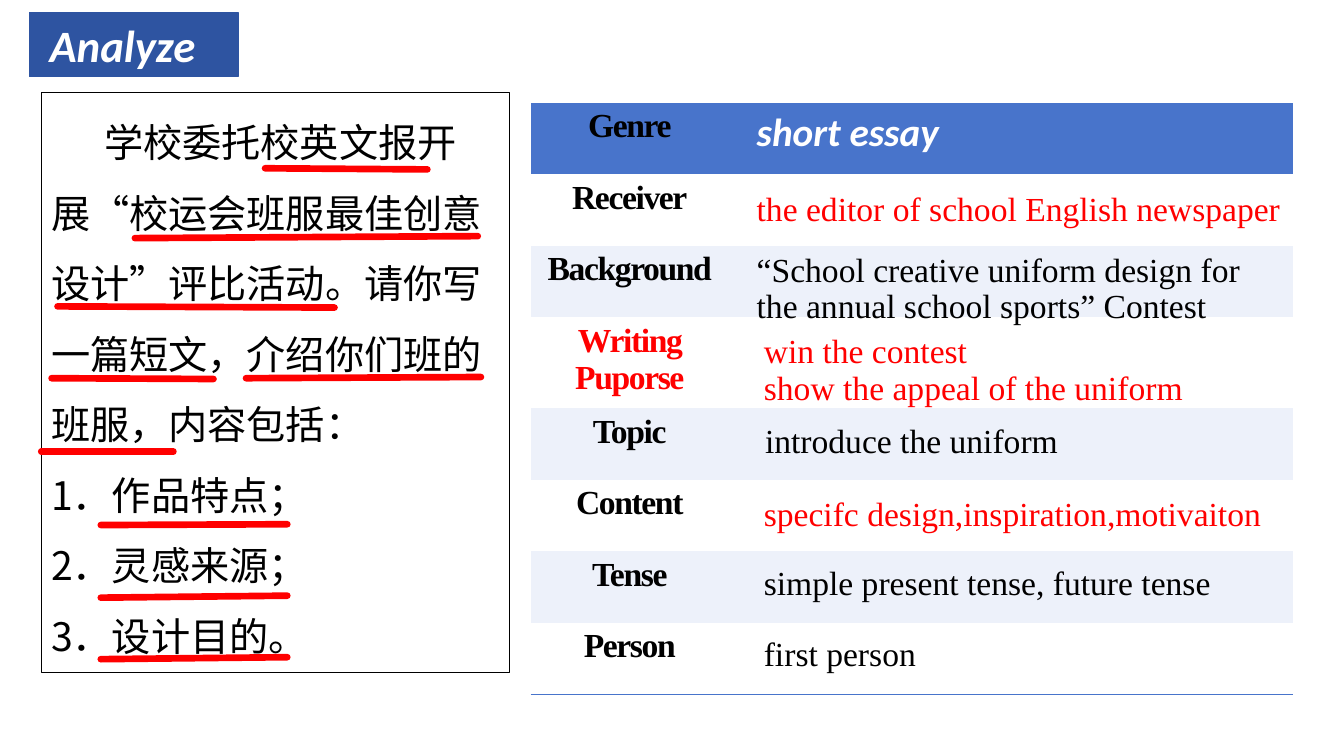
from dataclasses import dataclass
from typing import Any

from lxml import etree
from pptx import Presentation
from pptx import util as u
from pptx.dml.color import RGBColor
from pptx.enum import lang, shapes, text
from pptx.oxml import ns

COLORS = {
    "black": "000000",
    "white": "FFFFFF",
    "red": "FF0000",
    "title": "2E54A1",
    "header": "4874CB",
    "band": "EDF1FA",
}
SERIF, SANS, CHINESE = "Times New Roman", "Calibri", "Noto Sans CJK SC"
TITLE_FORMAT = {"name": SANS, "size": u.Pt(32), "bold": True, "italic": True}
GENRE_FORMAT = {**TITLE_FORMAT, "size": u.Pt(28)}
ANSWER_FORMAT = {"name": SERIF, "size": u.Pt(24)}
LABEL_FORMAT = {**ANSWER_FORMAT, "bold": True}
PROMPT_FORMAT = {
    "name": CHINESE,
    "size": u.Pt(28),
    "language_id": lang.MSO_LANGUAGE_ID.SIMPLIFIED_CHINESE,
}
NO_STYLE_TABLE = "{2D5ABB26-0587-4C30-8999-92F81FD0307C}"


@dataclass
class Answer:
    lines: list[str]
    left: float
    top: float
    width: float
    height: float
    color: str = "black"
    spacing: float = 0.9


@dataclass
class Underline:
    x1: float
    y1: float
    x2: float
    y2: float


PROMPT = [
    "学校委托校英文报开展“校运会班服最佳创意设计”评比活动。请你写一篇短文，介绍你们班的班服，内容包括：",
    "1．作品特点；",
    "2．灵感来源；",
    "3．设计目的。",
]
LABELS = ["Genre", "Receiver", "Background", "Writing Puporse",
          "Topic", "Content", "Tense", "Person"]
GENRE = Answer(["short essay"], 18.82, 2.59, 7.75, 1.45, "white", 1.0)
ANSWERS = [
    Answer(["the editor of school English newspaper"], 18.82, 4.62, 14.8, 1.27, "red", 1.0),
    Answer(["“School creative uniform design for the annual school sports” Contest"],
           18.82, 6.25, 13.41, 2.11),
    Answer(["win the contest", "show the appeal of the uniform"],
           19, 8.31, 14.43, 2.11, "red"),
    Answer(["introduce the uniform"], 19.03, 10.57, 14.43, 1.12),
    Answer(["specifc design,inspiration,motivaiton"], 19, 12.4, 14.43, 1.12, "red"),
    Answer(["simple present tense, future tense"], 19, 14.15, 14.43, 1.12),
    Answer(["first person"], 19, 15.95, 14.43, 1.12),
]
UNDERLINES = [
    Underline(1.45, 7.72, 8.43, 7.75),
    Underline(1.3, 9.53, 5.38, 9.55),
    Underline(6.2, 9.53, 12.12, 9.5),
    Underline(1.04, 11.38, 4.37, 11.38),
    Underline(2.54, 13.23, 7.24, 13.21),
    Underline(2.54, 15.06, 7.24, 15.01),
    Underline(2.54, 16.61, 7.24, 16.56),
    Underline(6.68, 4.24, 10.77, 4.27),
    Underline(3.4, 6, 12.04, 5.95),
]


def rgb(color: str) -> RGBColor:
    return RGBColor.from_string(COLORS[color])


def set_all(target: Any, values: dict[str, Any]) -> None:
    for name, value in values.items():
        setattr(target, name, value)


def write_lines(frame: Any, lines: list[str], font: dict[str, Any], color: str,
                **paragraph_format: Any) -> None:
    """Fill a text frame with one formatted run per paragraph."""
    frame.word_wrap = True
    for index, line in enumerate(lines):
        paragraph = frame.add_paragraph() if index else frame.paragraphs[0]
        set_all(paragraph, paragraph_format)
        run = paragraph.add_run()
        run.text = line
        set_all(run.font, font)
        run.font.color.rgb = rgb(color)


def add_box(slide: Any, left: float, top: float, width: float, height: float,
            line: str) -> Any:
    shape = slide.shapes.add_shape(
        shapes.MSO_SHAPE.RECTANGLE, u.Cm(left), u.Cm(top), u.Cm(width), u.Cm(height))
    shape.shadow.inherit = False
    shape.fill.background()
    shape.line.color.rgb = rgb(line)
    shape.line.width = u.Pt(0.75)
    return shape


def add_prompt(slide: Any) -> None:
    frame = add_box(slide, 1.04, 2.34, 11.79, 14.6, "black").text_frame
    set_all(frame, {"margin_top": u.Cm(0.05), "margin_right": u.Cm(0.51),
                    "vertical_anchor": text.MSO_ANCHOR.TOP})
    write_lines(frame, PROMPT, PROMPT_FORMAT, "black",
                alignment=text.PP_ALIGN.LEFT, line_spacing=u.Pt(50.4))
    frame.paragraphs[0]._p.get_or_add_pPr().set("indent", str(u.Cm(1.34)))
    for paragraph in frame.paragraphs:
        properties = paragraph.runs[0].font._element
        etree.SubElement(properties, ns.qn("a:ea"), typeface=CHINESE)


def add_title(slide: Any) -> None:
    shape = add_box(slide, 0.74, 0.31, 5.26, 1.63, "title")
    shape.fill.solid()
    shape.fill.fore_color.rgb = rgb("title")
    shape.text_frame.margin_left = u.Cm(0.51)
    write_lines(shape.text_frame, ["Analyze"], TITLE_FORMAT, "white",
                alignment=text.PP_ALIGN.LEFT)


def add_bottom_border(cell: Any, color: str) -> None:
    properties = cell._tc.get_or_add_tcPr()
    border = etree.Element(ns.qn("a:lnB"), w=str(u.Pt(0.75)))
    fill = etree.SubElement(border, ns.qn("a:solidFill"))
    etree.SubElement(fill, ns.qn("a:srgbClr"), val=COLORS[color])
    properties.insert(0, border)


def add_analysis_table(slide: Any) -> None:
    table = slide.shapes.add_table(
        len(LABELS), 2, u.Cm(13.37), u.Cm(2.59), u.Cm(19.22), u.Cm(14.9)).table
    set_all(table, {"first_row": False, "horz_banding": False})
    table._tbl.tblPr.find(ns.qn("a:tableStyleId")).text = NO_STYLE_TABLE
    for column, width in zip(table.columns, (5, 14.22)):
        column.width = u.Cm(width)
    for index, label in enumerate(LABELS):
        is_purpose = label.startswith("Writing")
        table.rows[index].height = u.Cm(2.3 if is_purpose else 1.8)
        band = "band" if index % 2 == 0 else "white"
        for cell in table.rows[index].cells:
            cell.fill.solid()
            cell.fill.fore_color.rgb = rgb("header" if index == 0 else band)
            if index == len(LABELS) - 1:
                add_bottom_border(cell, "header")
        frame = table.cell(index, 0).text_frame
        write_lines(frame, [label], LABEL_FORMAT, "red" if is_purpose else "black",
                    alignment=text.PP_ALIGN.CENTER)
        frame.paragraphs[0].runs[0].font._element.set("spc", "-100")


def add_answer(slide: Any, answer: Answer, font: dict[str, Any]) -> None:
    box = slide.shapes.add_textbox(
        u.Cm(answer.left), u.Cm(answer.top), u.Cm(answer.width), u.Cm(answer.height))
    write_lines(box.text_frame, answer.lines, font, answer.color,
                line_spacing=answer.spacing)


def add_underline(slide: Any, underline: Underline) -> None:
    connector = slide.shapes.add_connector(
        shapes.MSO_CONNECTOR.STRAIGHT, u.Cm(underline.x1), u.Cm(underline.y1),
        u.Cm(underline.x2), u.Cm(underline.y2))
    connector.line.color.rgb = rgb("red")
    connector.line.width = u.Pt(4.75)
    properties = connector._element.spPr
    properties.find(ns.qn("a:ln")).set("cap", "rnd")
    etree.SubElement(properties, ns.qn("a:effectLst"))


def main() -> None:
    presentation = Presentation()
    presentation.slide_width, presentation.slide_height = u.Cm(33.87), u.Cm(19.05)
    slide = presentation.slides.add_slide(presentation.slide_layouts[6])
    add_prompt(slide)
    add_title(slide)
    add_analysis_table(slide)
    add_answer(slide, GENRE, GENRE_FORMAT)
    for answer in ANSWERS:
        add_answer(slide, answer, ANSWER_FORMAT)
    for underline in UNDERLINES:
        add_underline(slide, underline)
    presentation.save("out.pptx")


if __name__ == "__main__":
    main()
